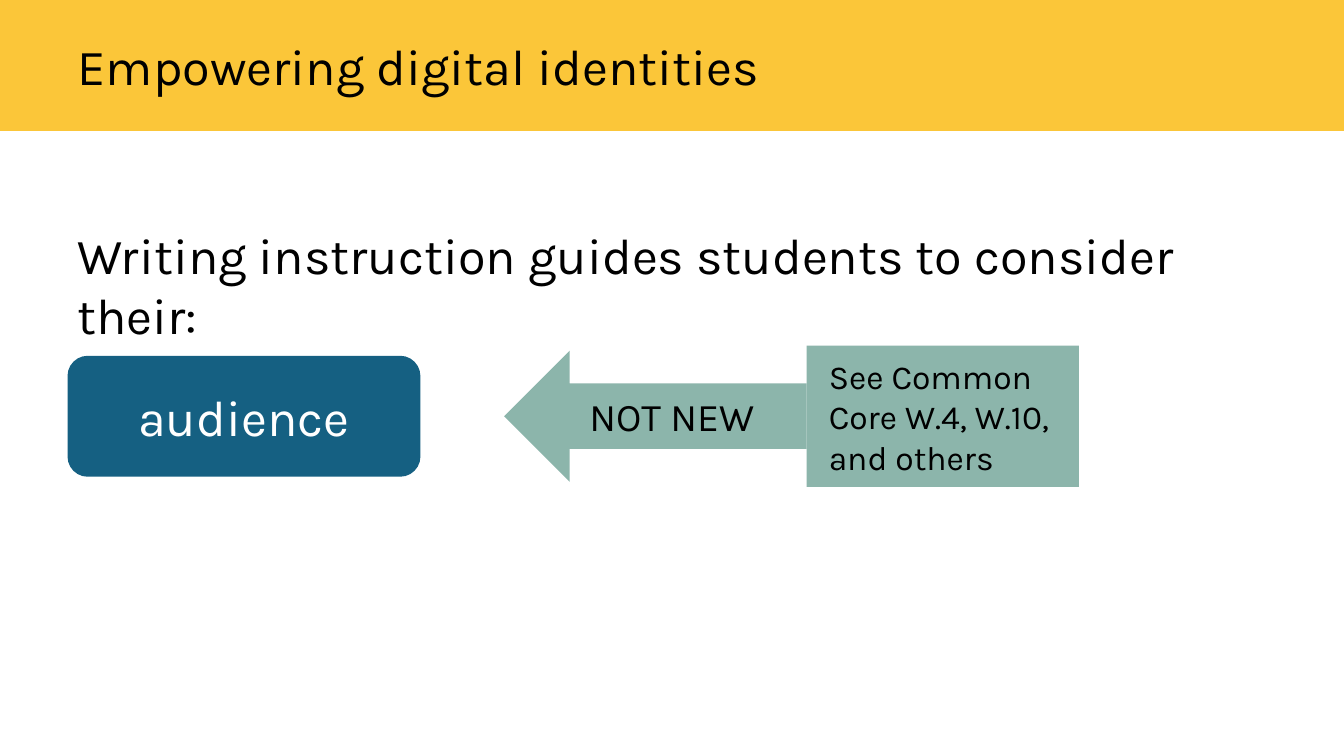
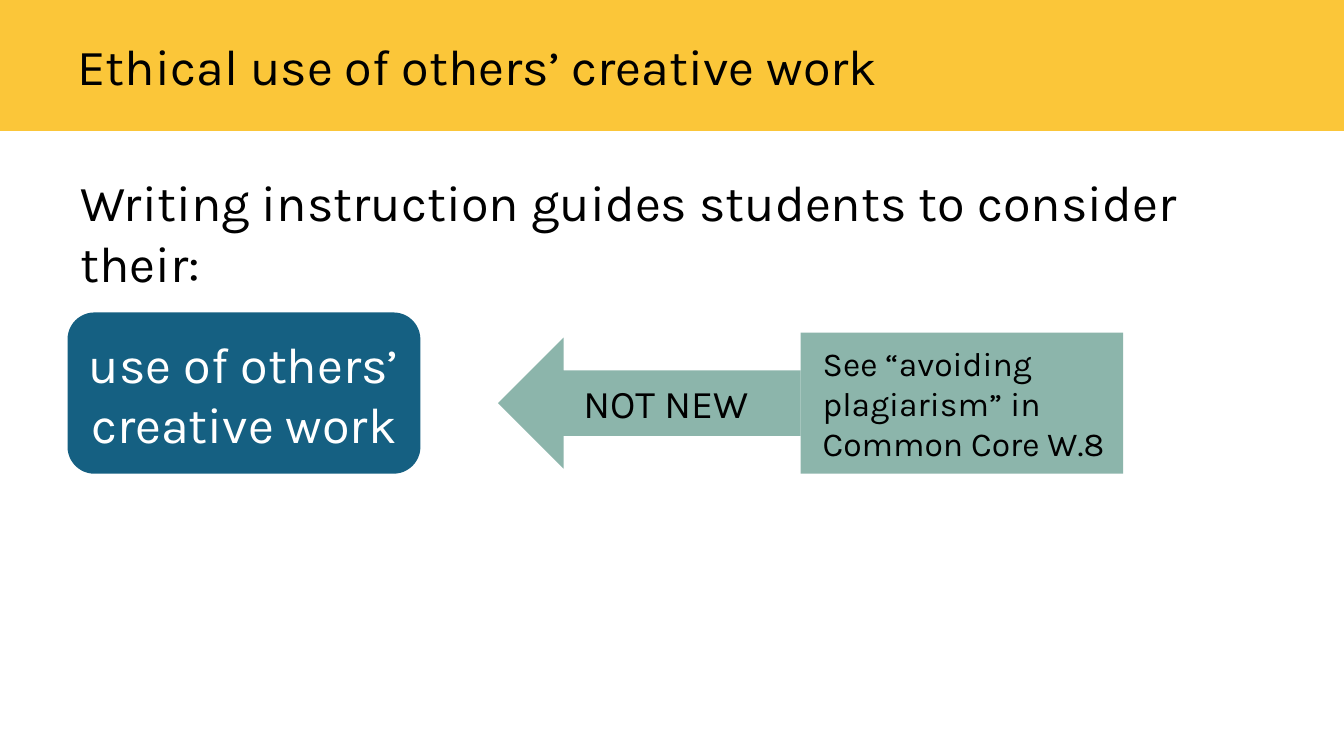
from pptx import Presentation
from pptx.dml.color import RGBColor
from pptx.enum.shapes import MSO_SHAPE as Shape
from pptx.enum.text import MSO_ANCHOR as Anchor, MSO_AUTO_SIZE as AutoSize, PP_ALIGN as Align
from pptx.util import Inches, Pt

YELLOW = RGBColor(0xFB, 0xC6, 0x39)
BLUE = RGBColor(0x15, 0x60, 0x82)
GREEN = RGBColor(0x8C, 0xB5, 0xAB)
BLACK = RGBColor(0, 0, 0)
WHITE = RGBColor(0xFF, 0xFF, 0xFF)

FONT = "Karla"
SLIDE_WIDTH, SLIDE_HEIGHT = 13.33, 7.5
BAND_HEIGHT = 1.3
MARGIN = 0.67
TEXT_WIDTH, TEXT_HEIGHT = 12, 0.71
TOPIC_WIDTH = 3.5
ARROW_WIDTH, ARROW_HEIGHT = 3, 1.3
NOTE_HEIGHT, NOTE_INSET = 1.4, 0.22
LEAD_IN = "Writing instruction guides students to consider their:"


def place(box, left, top, width, height):
    box.left, box.top = Inches(left), Inches(top)
    box.width, box.height = Inches(width), Inches(height)


def write(box, text, size, color=BLACK, align=Align.LEFT, anchor=Anchor.MIDDLE, after=0):
    frame = box.text_frame
    frame.word_wrap = True
    frame.vertical_anchor = anchor
    para = frame.paragraphs[0]
    para.alignment = align
    para.line_spacing = 1.0
    para.space_before = Pt(0)
    para.space_after = Pt(after)
    span = para.add_run()
    span.text = text
    span.font.name = FONT
    span.font.size = Pt(size)
    span.font.color.rgb = color


def write_heading(box, text):
    write(box, text, 36, anchor=Anchor.TOP, after=12)
    box.text_frame.auto_size = AutoSize.SHAPE_TO_FIT_TEXT


def add_block(page, kind, left, top, width, height, fill):
    block = page.shapes.add_shape(
        kind, Inches(left), Inches(top), Inches(width), Inches(height))
    block.shadow.inherit = False
    block.fill.solid()
    block.fill.fore_color.rgb = fill
    block.line.fill.background()
    return block


def add_title(page, text):
    title = page.shapes.title
    place(title, MARGIN, 0.3, TEXT_WIDTH, TEXT_HEIGHT)
    write_heading(title, text)
    band = add_block(page, Shape.RECTANGLE, 0, 0, SLIDE_WIDTH, BAND_HEIGHT, YELLOW)
    title.element.addprevious(band.element)


def add_lead_in(page, left, top):
    box = page.shapes.add_textbox(
        Inches(left), Inches(top), Inches(TEXT_WIDTH), Inches(TEXT_HEIGHT))
    write_heading(box, LEAD_IN)


def add_topic(page, text, top, height):
    topic = add_block(page, Shape.ROUNDED_RECTANGLE, MARGIN, top, TOPIC_WIDTH, height, BLUE)
    write(topic, text, 36, WHITE, Align.CENTER)


def add_callout(page, text, left, middle, note_width):
    arrow = add_block(page, Shape.LEFT_ARROW, left, middle - ARROW_HEIGHT / 2,
                      ARROW_WIDTH, ARROW_HEIGHT, GREEN)
    write(arrow, "NOT NEW", 28, align=Align.CENTER)
    note = add_block(page, Shape.RECTANGLE, left + ARROW_WIDTH, middle - NOTE_HEIGHT / 2,
                     note_width, NOTE_HEIGHT, GREEN)
    note.text_frame.margin_left = Inches(NOTE_INSET)
    write(note, text, 24, after=6)


def add_page(deck, title):
    page = deck.slides.add_slide(deck.slide_layouts.get_by_name("Title Only"))
    add_title(page, title)
    return page


def main():
    deck = Presentation()
    deck.slide_width, deck.slide_height = Inches(SLIDE_WIDTH), Inches(SLIDE_HEIGHT)

    page = add_page(deck, "Empowering digital identities")
    add_lead_in(page, MARGIN, 2.17)
    add_topic(page, "audience", 3.53, 1.2)
    add_callout(page, "See Common Core W.4, W.10, and others", 5, 4.13, 2.7)

    page = add_page(deck, "Ethical use of others’ creative work")
    add_lead_in(page, 0.7, 1.65)
    add_topic(page, "use of others’ creative work", 3.1, 1.6)
    add_callout(page, "See “avoiding plagiarism” in Common Core W.8", 4.94, 4, 3.2)

    deck.save("out.pptx")


if __name__ == "__main__":
    main()
